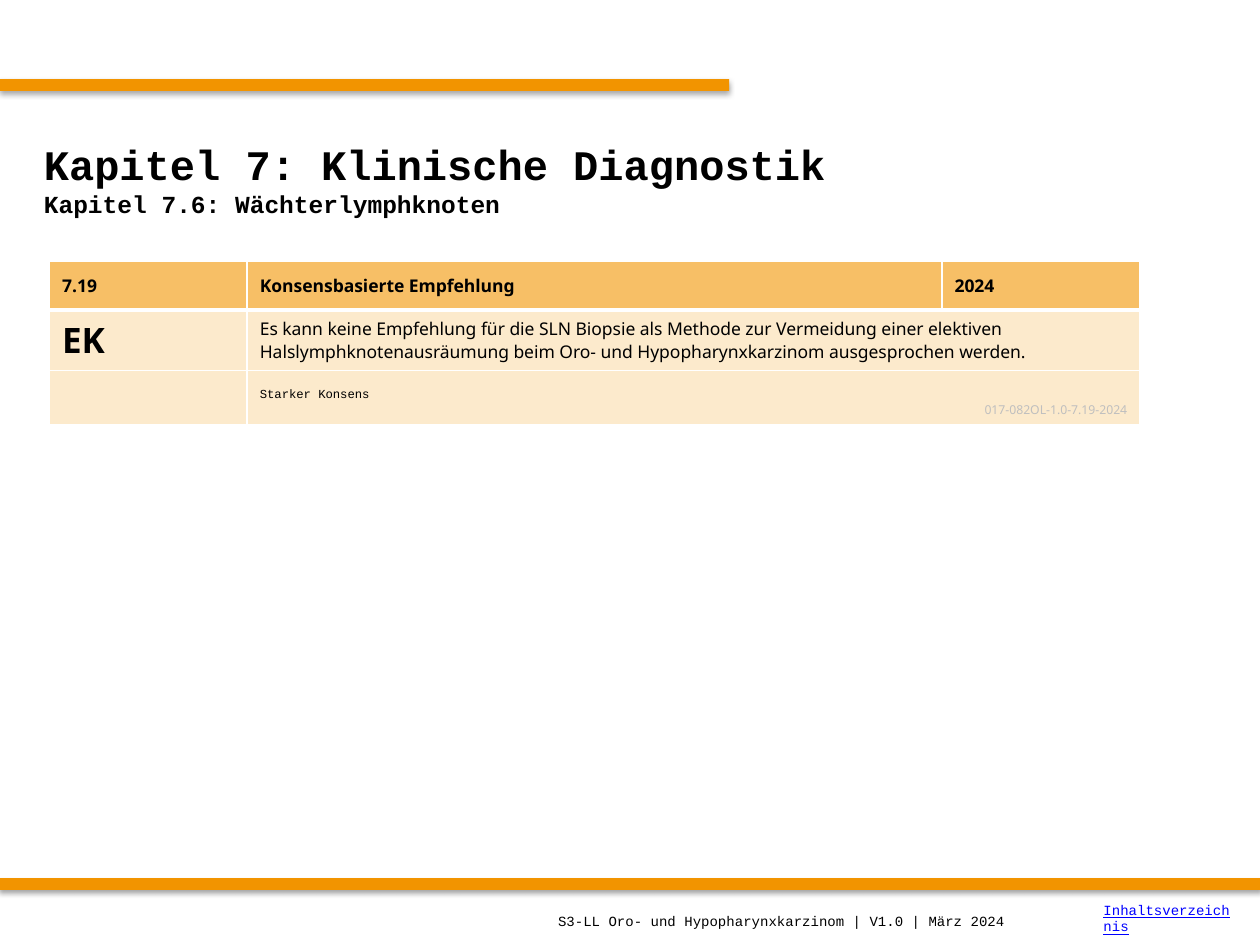
import dataclasses
import typing

import pptx
import pptx.dml.color
import pptx.enum.shapes
import pptx.enum.text
import pptx.oxml
import pptx.oxml.ns
import pptx.util

Pt = pptx.util.Pt
Anchor = pptx.enum.text.MSO_ANCHOR
Align = pptx.enum.text.PP_ALIGN
NAMESPACE = pptx.oxml.ns.nsdecls("a")
ORANGE, HEADER, BODY, WHITE = "F29400", "F7BF66", "FCEACC", "FFFFFF"
MONO, SANS = "Courier New", "Noto Sans"


@dataclasses.dataclass
class Bar:
    top: float
    width: float


@dataclasses.dataclass
class Line:
    text: str
    style: dict[str, typing.Any]


@dataclasses.dataclass
class Entry:
    row: int
    column: int
    lines: list[Line]
    anchor: typing.Any = Anchor.MIDDLE


def color(value: str) -> pptx.dml.color.RGBColor:
    return pptx.dml.color.RGBColor.from_string(value)


def write(para, text: str, *, size: float, font: str = MONO, ink: str = "000000",
          bold: bool = False, underline: bool = False, align=Align.LEFT) -> None:
    para.alignment = align
    span = para.add_run()
    span.text = text
    span.font.size = Pt(size)
    span.font.name = font
    span.font.bold = bold
    span.font.underline = underline
    span.font.color.rgb = color(ink)


def write_lines(frame, lines: list[Line]) -> None:
    for index, line in enumerate(lines):
        para = frame.add_paragraph() if index else frame.paragraphs[0]
        write(para, line.text, **line.style)


def add_bar(page, bar: Bar) -> None:
    shape = page.shapes.add_shape(pptx.enum.shapes.MSO_SHAPE.RECTANGLE,
                                  0, Pt(bar.top), Pt(bar.width), Pt(6.8))
    shape.fill.solid()
    shape.fill.fore_color.rgb = color(ORANGE)
    shape.line.fill.background()
    shape.shadow.inherit = False
    effects = shape._element.spPr.find(pptx.oxml.ns.qn("a:effectLst"))
    effects.append(pptx.oxml.parse_xml(
        f'<a:outerShdw {NAMESPACE} blurRad="{Pt(3.1)}" dist="{Pt(1.8)}" dir="5400000" '
        'rotWithShape="0"><a:srgbClr val="000000"><a:alpha val="35000"/></a:srgbClr>'
        '</a:outerShdw>'))


def add_text(page, left: float, top: float, width: float, height: float,
             lines: list[Line]) -> None:
    box = page.shapes.add_textbox(Pt(left), Pt(top), Pt(width), Pt(height))
    box.text_frame.word_wrap = True
    box.text_frame.vertical_anchor = Anchor.MIDDLE
    write_lines(box.text_frame, lines)


def style_cell(cell, row: int) -> None:
    properties = cell._tc.get_or_add_tcPr()
    widths = {"L": 1, "R": 1, "T": 3 if row == 1 else 1, "B": 3 if row == 0 else 1}
    for side, width in widths.items():
        properties.append(pptx.oxml.parse_xml(
            f'<a:ln{side} {NAMESPACE} w="{Pt(width)}"><a:solidFill>'
            f'<a:srgbClr val="{WHITE}"/></a:solidFill></a:ln{side}>'))
    cell.fill.solid()
    cell.fill.fore_color.rgb = color(BODY if row else HEADER)


def add_recommendation(page, entries: list[Entry]) -> None:
    widths, heights = [113, 397, 113], [28, 34.5, 31]
    table = page.shapes.add_table(3, 3, Pt(28.3), Pt(149.2),
                                  Pt(sum(widths)), Pt(sum(heights))).table
    table.first_row = table.horz_banding = False
    for column, width in zip(table.columns, widths):
        column.width = Pt(width)
    for index, height in enumerate(heights):
        table.rows[index].height = Pt(height)
        for column in range(len(widths)):
            cell = table.cell(index, column)
            style_cell(cell, index)
            cell.text_frame.paragraphs[0].font.size = Pt(7)
    for row in (1, 2):
        table.cell(row, 1).merge(table.cell(row, 2))
    for entry in entries:
        cell = table.cell(entry.row, entry.column)
        cell.vertical_anchor = entry.anchor
        write_lines(cell.text_frame, entry.lines)


def main() -> None:
    deck = pptx.Presentation()
    deck.slide_width, deck.slide_height = Pt(720), Pt(540)
    page = deck.slides.add_slide(deck.slide_layouts[6])
    for bar in (Bar(45.2, 416.7), Bar(501.8, 720)):
        add_bar(page, bar)
    add_text(page, 18, 60, 684, 84, [
        Line("Kapitel 7: Klinische Diagnostik", {"size": 24, "bold": True}),
        Line("Kapitel 7.6: Wächterlymphknoten", {"size": 14, "bold": True}),
    ])
    heading = {"size": 10, "font": SANS, "bold": True}
    titles = ["7.19", "Konsensbasierte Empfehlung", "2024"]
    entries = [Entry(0, column, [Line(title, heading)])
               for column, title in enumerate(titles)]
    entries += [
        Entry(1, 0, [Line("EK", {"size": 20, "font": SANS, "bold": True})], Anchor.TOP),
        Entry(1, 1, [Line(
            "Es kann keine Empfehlung für die SLN Biopsie als Methode zur Vermeidung "
            "einer elektiven Halslymphknotenausräumung beim Oro- und "
            "Hypopharynxkarzinom ausgesprochen werden.",
            {"size": 10, "font": SANS})], Anchor.TOP),
        Entry(2, 1, [
            Line("Starker Konsens", {"size": 7}),
            Line("017-082OL-1.0-7.19-2024",
                 {"size": 7, "font": SANS, "ink": "BFBFBF", "align": Align.RIGHT}),
        ], Anchor.BOTTOM),
    ]
    add_recommendation(page, entries)
    add_text(page, 311.8, 512, 396.7, 28, [
        Line("S3-LL Oro- und Hypopharynxkarzinom | V1.0 | März 2024", {"size": 8})])
    add_text(page, 623.5, 510.5, 88, 28, [
        Line("Inhaltsverzeichnis", {"size": 8, "ink": "0000FF", "underline": True})])
    deck.save("out.pptx")


if __name__ == "__main__":
    main()
